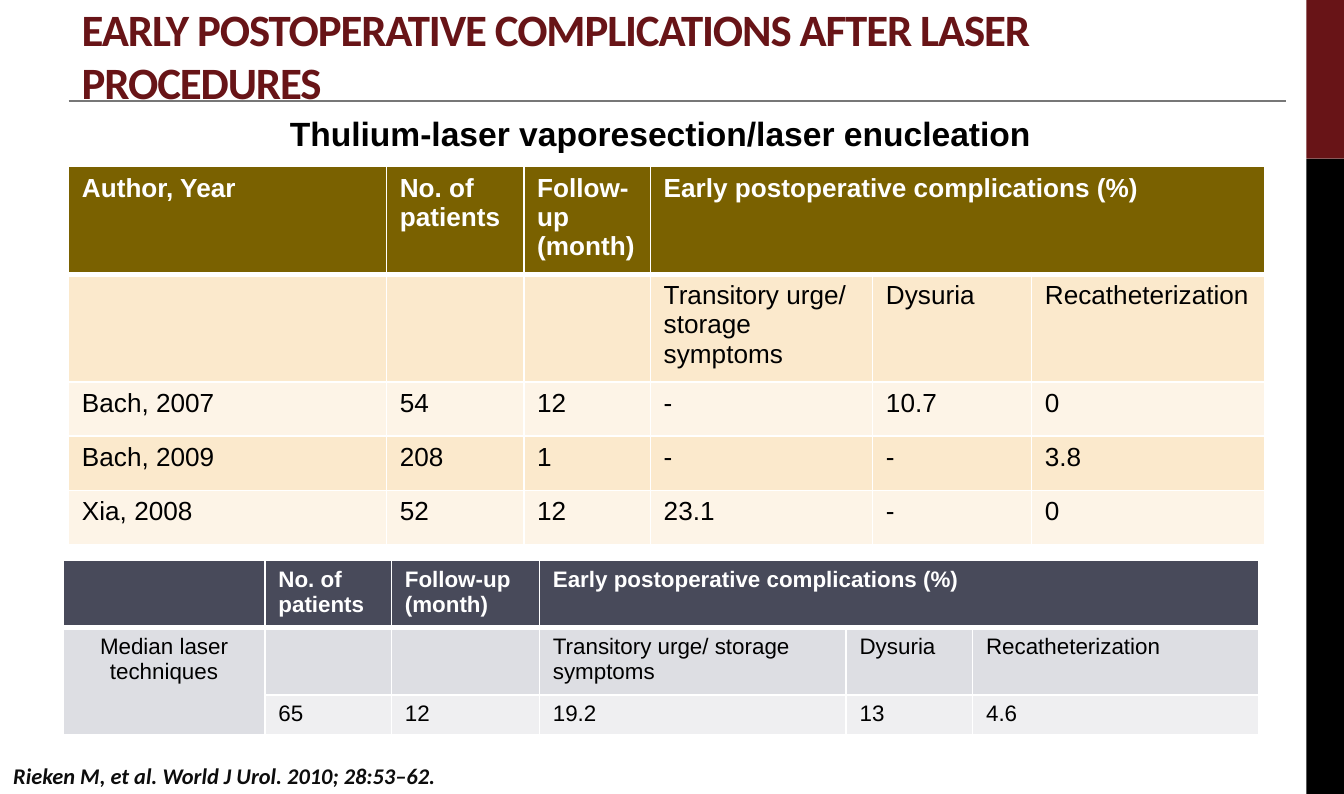
from dataclasses import dataclass

from lxml import etree
from pptx import Presentation
from pptx import util as u
from pptx.dml.color import RGBColor
from pptx.enum import shapes, text
from pptx.oxml.ns import qn

WIDTH, HEIGHT = u.Inches(10), u.Inches(5.91)


@dataclass(frozen=True)
class Theme:
    heading: str = "Calibri"
    body: str = "Arial"
    maroon: str = "681417"
    black: str = "000000"
    ink: str = "0D0D0D"
    white: str = "FFFFFF"
    rule: str = "777777"
    gold: tuple = ("7A6100", "FBE9CC", "FDF4E7")
    slate: tuple = ("484A5A", "DDDEE3", "EFEFF1")
    title_size: int = 24
    subtitle_size: int = 18
    study_size: int = 14
    note_size: int = 12


THEME = Theme()


@dataclass(frozen=True)
class Box:
    """An area in percent of the slide's width and height."""
    left: float
    top: float
    width: float
    height: float

    def lengths(self):
        return (across(self.left), down(self.top),
                across(self.width), down(self.height))


def across(percent):
    return round(WIDTH * percent / 100)


def down(percent):
    return round(HEIGHT * percent / 100)


def style_font(font, color, **values):
    for name, value in values.items():
        setattr(font, name, value)
    font.color.rgb = RGBColor.from_string(color)


def add_text(slide, box, words, anchor, alignment, color, **font_values):
    frame = slide.shapes.add_textbox(*box.lengths()).text_frame
    frame.word_wrap = True
    frame.vertical_anchor = anchor
    paragraph = frame.paragraphs[0]
    paragraph.alignment = alignment
    run = paragraph.add_run()
    run.text = words
    style_font(run.font, color, **font_values)
    return run


def add_side_band(slide, box, top_share):
    split = box.height * top_share
    parts = ((box.top, split, THEME.maroon),
             (box.top + split, box.height - split, THEME.black))
    for top, height, color in parts:
        band = slide.shapes.add_shape(
            shapes.MSO_SHAPE.RECTANGLE,
            *Box(box.left, top, box.width, height).lengths())
        band.shadow.inherit = False
        band.fill.solid()
        band.fill.fore_color.rgb = RGBColor.from_string(color)
        band.line.fill.background()


def add_title(slide, box, rule_top, rule_width):
    run = add_text(
        slide, box, "EARLY POSTOPERATIVE COMPLICATIONS AFTER LASER PROCEDURES",
        text.MSO_ANCHOR.BOTTOM, text.PP_ALIGN.LEFT, THEME.maroon,
        name=THEME.heading, size=u.Pt(THEME.title_size), bold=True)
    run.font._element.set("spc", "-60")
    rule = slide.shapes.add_connector(
        shapes.MSO_CONNECTOR.STRAIGHT, across(box.left), down(rule_top),
        across(box.left + rule_width), down(rule_top))
    rule.line.color.rgb = RGBColor.from_string(THEME.rule)
    rule.line.width = u.Pt(1)
    etree.SubElement(rule._element.spPr, qn("a:effectLst"))


def set_borders(cell, **points):
    properties = cell._tc.get_or_add_tcPr()
    for side in "LRTB":
        width = u.Pt(points.get(side, 1))
        line = etree.SubElement(properties, qn(f"a:ln{side}"), w=str(width))
        fill = etree.SubElement(line, qn("a:solidFill"))
        etree.SubElement(fill, qn("a:srgbClr"), val=THEME.white)


def fill_cell(cell, words, size, color, bold):
    cell.text = words
    for paragraph in cell.text_frame.paragraphs:
        for run in paragraph.runs:
            style_font(run.font, color, name=THEME.body, size=u.Pt(size), bold=bold)
        if not paragraph.runs:
            # Keeps an empty cell from growing its row at the default size.
            etree.SubElement(paragraph._p, qn("a:endParaRPr"), sz=str(size * 100))


def add_study_table(slide, box, columns, row_heights, rows, palette, size, merges):
    """Columns are relative widths; palette is header, odd and even row fill."""
    table = slide.shapes.add_table(len(rows), len(columns), *box.lengths()).table
    for column, share in zip(table.columns, columns):
        column.width = round(across(box.width) * share / sum(columns))
    for row, height in zip(table.rows, row_heights):
        row.height = down(height)
    for row_index, values in enumerate(rows):
        header = row_index == 0
        fill = palette[0] if header else palette[2 - row_index % 2]
        borders = {0: {"B": 3}, 1: {"T": 3}}.get(row_index, {})
        for column_index, words in enumerate(values):
            cell = table.cell(row_index, column_index)
            set_borders(cell, **borders)
            cell.fill.solid()
            cell.fill.fore_color.rgb = RGBColor.from_string(fill)
            fill_cell(cell, words, size, THEME.white if header else THEME.black, header)
    for first, last in merges:
        table.cell(*first).merge(table.cell(*last))
    return table


def build_slide(slide):
    add_side_band(slide, Box(97.2, 0, 2.8, 100), 0.2)
    add_title(slide, Box(5.1, 2.03, 90.7, 12.52), 12.7, 90.6)
    add_text(slide, Box(0, 95.26, 97.2, 4.74),
             "Rieken M, et al. World J Urol. 2010; 28:53–62.",
             text.MSO_ANCHOR.MIDDLE, text.PP_ALIGN.LEFT, THEME.ink,
             name=THEME.heading, size=u.Pt(THEME.note_size), bold=True, italic=True)
    add_text(slide, Box(9.8, 13.37, 78.7, 6.77),
             "Thulium-laser vaporesection/laser enucleation",
             text.MSO_ANCHOR.TOP, text.PP_ALIGN.CENTER, THEME.black,
             name=THEME.body, size=u.Pt(THEME.subtitle_size), bold=True)

    counts = ["No. of\npatients", "Follow-up\n(month)"]
    outcome = ["Early postoperative complications (%)", "", ""]
    events = ["Dysuria", "Recatheterization"]
    outcome_span = ((0, 3), (0, 5))
    add_study_table(
        slide, Box(5.1, 20.98, 89, 34.7),
        (2.36, 1.02, 0.94, 1.65, 1.18, 1.73), [6.85] * 5,
        [["Author, Year", *counts, *outcome],
         ["", "", "", "Transitory urge/\nstorage symptoms", *events],
         ["Bach, 2007", "54", "12", "-", "10.7", "0"],
         ["Bach, 2009", "208", "1", "-", "-", "3.8"],
         ["Xia, 2008", "52", "12", "23.1", "-", "0"]],
        THEME.gold, THEME.study_size, [outcome_span])
    medians = add_study_table(
        slide, Box(4.7, 70.56, 89, 16.2),
        (1.5, 0.94, 1.1, 2.28, 0.94, 2.13), (7, 7, 2.2),
        [["", *counts, *outcome],
         ["Median laser techniques", "", "", "Transitory urge/ storage symptoms", *events],
         ["", "65", "12", "19.2", "13", "4.6"]],
        THEME.slate, THEME.note_size, [outcome_span, ((1, 0), (2, 0))])
    medians.cell(1, 0).text_frame.paragraphs[0].alignment = text.PP_ALIGN.CENTER


def main():
    presentation = Presentation()
    presentation.slide_width, presentation.slide_height = WIDTH, HEIGHT
    build_slide(presentation.slides.add_slide(presentation.slide_layouts[6]))
    presentation.save("out.pptx")


if __name__ == "__main__":
    main()
